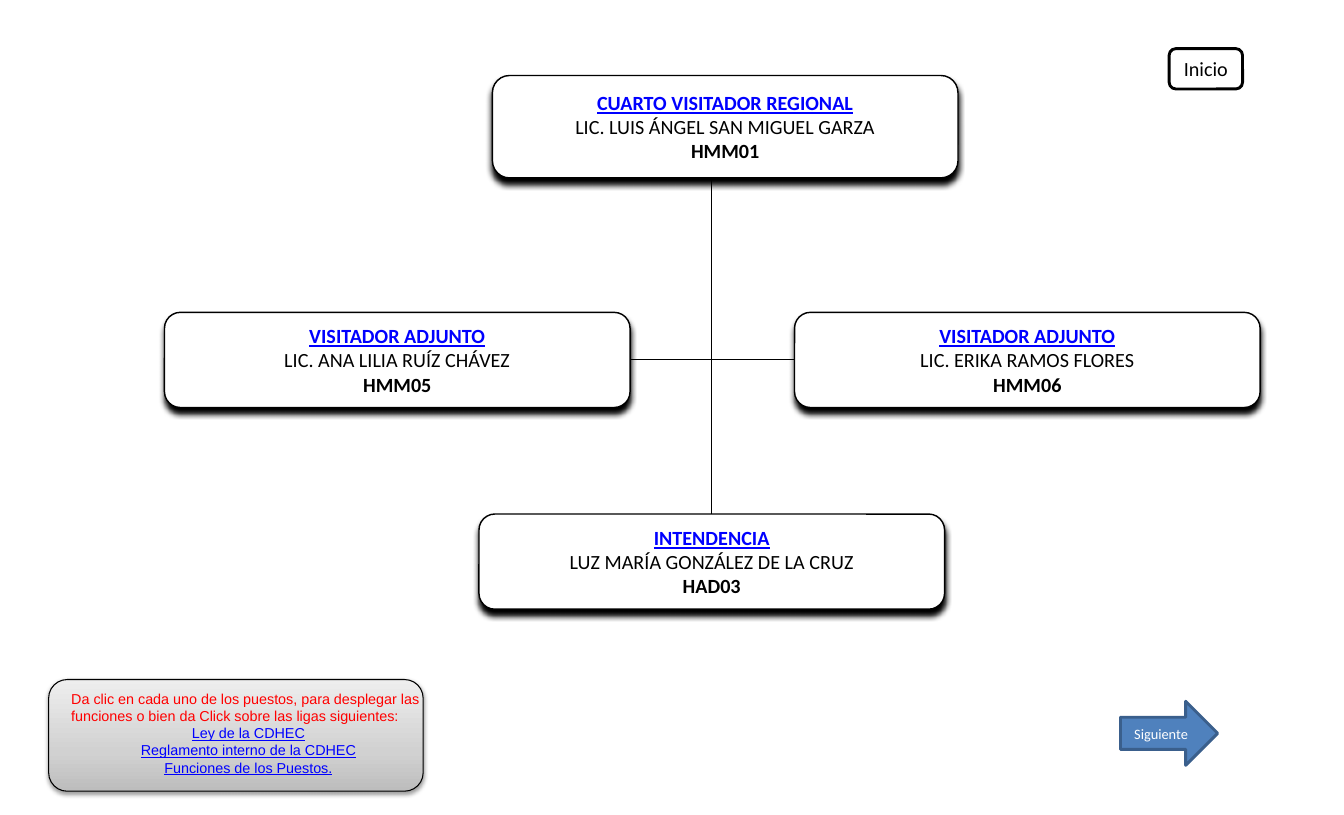
"""Build the organisation chart slide of the fourth regional visitor's office."""
from copy import deepcopy
from dataclasses import dataclass

from lxml import etree
from pptx import Presentation
from pptx.dml.color import RGBColor
from pptx.enum.shapes import MSO_CONNECTOR, MSO_SHAPE
from pptx.enum.text import MSO_ANCHOR, MSO_AUTO_SIZE, PP_ALIGN
from pptx.oxml.ns import qn
from pptx.shapes.autoshape import Shape
from pptx.slide import Slide
from pptx.util import Inches, Pt

ROUNDED = MSO_SHAPE.ROUNDED_RECTANGLE
RIGHT_ARROW = MSO_SHAPE.RIGHT_ARROW
STRAIGHT = MSO_CONNECTOR.STRAIGHT
MIDDLE = MSO_ANCHOR.MIDDLE
GROW = MSO_AUTO_SIZE.SHAPE_TO_FIT_TEXT
LEFT, CENTER = PP_ALIGN.LEFT, PP_ALIGN.CENTER

BLACK, WHITE, LINK, RED = "000000", "FFFFFF", "0000FF", "FF0000"
POSITION_WIDTH = 4.5


@dataclass
class Position:
    left: float
    top: float
    height: float
    title: str
    holder: str
    code: str


@dataclass
class Button:
    kind: int
    box: tuple[float, float, float, float]
    label: str
    size: float
    fill: str
    line: str
    font_color: str


@dataclass
class TextStyle:
    size: float
    color: str = BLACK
    font: str = "Calibri"
    bold: bool = False
    underline: bool = False
    align: int = CENTER


POSITIONS = [
    Position(4.76, 0.73, 0.99, "CUARTO VISITADOR REGIONAL",
             "LIC. LUIS ÁNGEL SAN MIGUEL GARZA", "HMM01"),
    Position(4.63, 4.97, 0.92, "INTENDENCIA",
             "LUZ MARÍA GONZÁLEZ DE LA CRUZ", "HAD03"),
    Position(1.59, 3.02, 0.92, "VISITADOR ADJUNTO",
             "LIC. ANA LILIA RUÍZ CHÁVEZ", "HMM05"),
    Position(7.68, 3.02, 0.92, "VISITADOR ADJUNTO",
             "LIC. ERIKA RAMOS FLORES", "HMM06"),
]
POSITION_STYLES = [
    TextStyle(14, LINK, bold=True, underline=True),
    TextStyle(14),
    TextStyle(14, bold=True),
]
BRANCHES = [(6.88, 1.73, 6.88, 4.97), (6.09, 3.48, 7.68, 3.48)]
BUTTONS = [
    Button(ROUNDED, (11.3, 0.47, 0.71, 0.39), "Inicio", 14, WHITE, BLACK, BLACK),
    Button(RIGHT_ARROW, (10.83, 6.78, 0.94, 0.62), "Siguiente", 10,
           "4F81BD", "3A5F8C", WHITE),
]
NOTE_LINES = [
    "Da clic en cada uno de los puestos, para desplegar las funciones "
    "o bien da Click sobre las ligas siguientes:",
    "Ley de la CDHEC",
    "Reglamento interno de la CDHEC",
    "Funciones de los Puestos.",
]
NOTE_LINK = TextStyle(10, LINK, "Arial", underline=True)
NOTE_STYLES = [TextStyle(10, RED, "Arial", align=LEFT)] + [NOTE_LINK] * 3
NOTE_GRADIENT = [(0, "BDBDBD"), (0.35, "D1D1D1"), (1, "EEEEEE")]


def rgb(color: str) -> RGBColor:
    return RGBColor.from_string(color)


def write_lines(shape: Shape, lines: list[str], styles: list[TextStyle]) -> None:
    shape.text_frame.text = "\n".join(lines)
    for paragraph, style in zip(shape.text_frame.paragraphs, styles):
        paragraph.alignment = style.align
        for run in paragraph.runs:
            run.font.name = style.font
            run.font.size = Pt(style.size)
            run.font.bold = style.bold
            run.font.underline = style.underline
            run.font.color.rgb = rgb(style.color)


def add_box(slide: Slide, kind: int, box: tuple[float, float, float, float],
            fill: str, line: str, line_width: float) -> Shape:
    shape = slide.shapes.add_shape(kind, *map(Inches, box))
    shape.shadow.inherit = False
    shape.fill.solid()
    shape.fill.fore_color.rgb = rgb(fill)
    shape.line.color.rgb = rgb(line)
    shape.line.width = Pt(line_width)
    shape.text_frame.vertical_anchor = MIDDLE
    return shape


def add_shadow(shape: Shape, opacity: int, blur: float, distance: float) -> None:
    effects = shape._element.spPr.find(qn("a:effectLst"))
    shadow = etree.SubElement(
        effects, qn("a:outerShdw"), blurRad=str(Pt(blur)),
        dist=str(Pt(distance)), dir="5400000", rotWithShape="0")
    color = etree.SubElement(shadow, qn("a:srgbClr"), val=BLACK)
    etree.SubElement(color, qn("a:alpha"), val=str(opacity * 1000))


def add_position(slide: Slide, position: Position) -> None:
    box = (position.left, position.top, POSITION_WIDTH, position.height)
    shape = add_box(slide, ROUNDED, box, WHITE, BLACK, 1)
    add_shadow(shape, 100, 4, 4)
    frame = shape.text_frame
    frame.word_wrap = False
    frame.margin_left = frame.margin_right = Inches(0.17)
    frame.margin_top = frame.margin_bottom = Inches(0.09)
    lines = [position.title, position.holder, position.code]
    write_lines(shape, lines, POSITION_STYLES)


def add_branch(slide: Slide, ends: tuple[float, float, float, float]) -> None:
    branch = slide.shapes.add_connector(STRAIGHT, *map(Inches, ends))
    branch.line.color.rgb = rgb(BLACK)
    branch.line.width = Pt(0.75)
    etree.SubElement(branch._element.spPr, qn("a:effectLst"))


def add_button(slide: Slide, button: Button) -> None:
    shape = add_box(slide, button.kind, button.box, button.fill, button.line, 2)
    write_lines(shape, [button.label], [TextStyle(button.size, button.font_color)])


def add_note(slide: Slide) -> None:
    panel = add_box(slide, ROUNDED, (0.47, 6.57, 3.62, 1.08), WHITE, BLACK, 0.75)
    add_shadow(panel, 38, 3.1, 1.6)
    panel.fill.gradient()
    panel.fill.gradient_angle = 90
    stop_list = panel._element.spPr.find(".//" + qn("a:gsLst"))
    stop_list.insert(1, deepcopy(stop_list[0]))
    for stop, (position, color) in zip(panel.fill.gradient_stops, NOTE_GRADIENT):
        stop.position = position
        stop.color.rgb = rgb(color)
    note = slide.shapes.add_textbox(*map(Inches, (0.59, 6.62, 3.62, 0.94)))
    note.text_frame.word_wrap = True
    note.text_frame.auto_size = GROW
    write_lines(note, NOTE_LINES, NOTE_STYLES)


def main() -> None:
    presentation = Presentation()
    presentation.slide_width = Inches(12.99)
    presentation.slide_height = Inches(7.88)
    slide = presentation.slides.add_slide(presentation.slide_layouts[6])
    for position in POSITIONS:
        add_position(slide, position)
    for ends in BRANCHES:
        add_branch(slide, ends)
    for button in BUTTONS:
        add_button(slide, button)
    add_note(slide)
    presentation.save("out.pptx")


if __name__ == "__main__":
    main()
